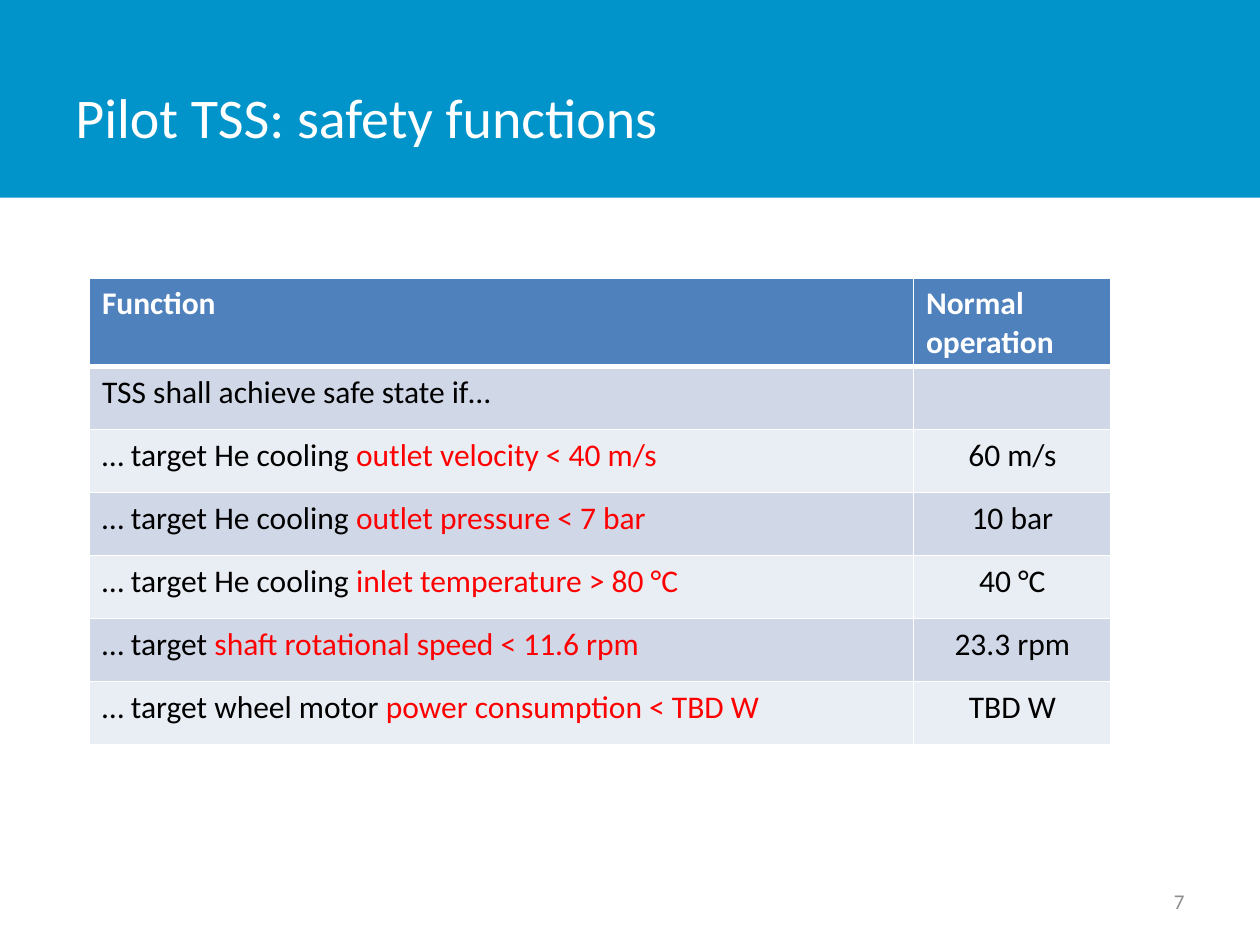
from lxml import etree
from pptx import Presentation
from pptx.dml.color import RGBColor
from pptx.enum.shapes import MSO_SHAPE
from pptx.enum.text import MSO_ANCHOR, PP_ALIGN
from pptx.oxml.ns import qn
from pptx.util import Inches, Pt

RECTANGLE = MSO_SHAPE.RECTANGLE
MIDDLE = MSO_ANCHOR.MIDDLE
LEFT, CENTER, RIGHT = PP_ALIGN.LEFT, PP_ALIGN.CENTER, PP_ALIGN.RIGHT
COLUMN_WIDTHS = [6.54, 1.57]
HEADER_HEIGHT, ROW_HEIGHT = 0.67, 0.5
BLACK, WHITE, RED = "000000", "FFFFFF", "FF0000"
HEADER_FILL, BAND_FILLS = "4F81BD", ["D0D8E8", "E9EDF4"]


def color(value):
    return RGBColor.from_string(value)


def write(text_frame, *parts, size=18, fill=BLACK, bold=False, align=LEFT):
    text_frame.word_wrap = True
    paragraph = text_frame.paragraphs[0]
    paragraph.alignment = align
    for part, part_fill in zip(parts, [fill, RED]):
        run = paragraph.add_run()
        run.text = part
        run.font.name = "Calibri"
        run.font.size = Pt(size)
        run.font.bold = bold
        run.font.color.rgb = color(part_fill)


presentation = Presentation()
presentation.slide_width = Inches(10)
presentation.slide_height = Inches(7.5)
slide = presentation.slides.add_slide(presentation.slide_layouts[6])

banner = slide.shapes.add_shape(RECTANGLE, 0, 0, presentation.slide_width, Inches(1.57))
banner.shadow.inherit = False
banner.fill.solid()
banner.fill.fore_color.rgb = color("0094CA")
banner.line.fill.background()

title = slide.shapes.add_textbox(Inches(0.5), Inches(0.3), Inches(7.81), Inches(1.25))
title.text_frame.vertical_anchor = MIDDLE
write(title.text_frame, "Pilot TSS: safety functions", size=32, fill=WHITE)

rows = [
    (["Function"], "Normal operation"),
    (["TSS shall achieve safe state if…"], ""),
    (["… target He cooling ", "outlet velocity < 40 m/s"], "60 m/s"),
    (["… target He cooling ", "outlet pressure < 7 bar"], "10 bar"),
    (["… target He cooling ", "inlet temperature > 80 °C"], "40 °C"),
    (["… target ", "shaft rotational speed < 11.6 rpm"], "23.3 rpm"),
    (["… target wheel motor ", "power consumption < TBD W"], "TBD W"),
]
table_height = HEADER_HEIGHT + ROW_HEIGHT * (len(rows) - 1)
table = slide.shapes.add_table(
    len(rows), len(COLUMN_WIDTHS), Inches(0.71), Inches(2.21),
    Inches(sum(COLUMN_WIDTHS)), Inches(table_height),
).table
for column, width in zip(table.columns, COLUMN_WIDTHS):
    column.width = Inches(width)

for row_index, (function, normal) in enumerate(rows):
    is_header = row_index == 0
    table.rows[row_index].height = Inches(HEADER_HEIGHT if is_header else ROW_HEIGHT)
    row_fill = HEADER_FILL if is_header else BAND_FILLS[(row_index - 1) % 2]
    value_align = LEFT if is_header else CENTER
    for column_index, (parts, align) in enumerate([(function, LEFT), ([normal], value_align)]):
        cell = table.cell(row_index, column_index)
        properties = cell._tc.get_or_add_tcPr()
        for side in ["lnL", "lnR", "lnT", "lnB"]:
            thick = (row_index, side) in [(0, "lnB"), (1, "lnT")]
            border = etree.SubElement(properties, qn(f"a:{side}"), w=str(Pt(3 if thick else 1)))
            border_fill = etree.SubElement(border, qn("a:solidFill"))
            etree.SubElement(border_fill, qn("a:srgbClr"), val=WHITE)
        cell.fill.solid()
        cell.fill.fore_color.rgb = color(row_fill)
        if any(parts):
            write(cell.text_frame, *parts, fill=WHITE if is_header else BLACK,
                  bold=is_header, align=align)

slide_number = slide.shapes.add_textbox(Inches(7.17), Inches(6.95), Inches(2.33), Inches(0.4))
slide_number.text_frame.vertical_anchor = MIDDLE
write(slide_number.text_frame, "7", size=12, fill="8C8C8C", align=RIGHT)

presentation.save("out.pptx")
